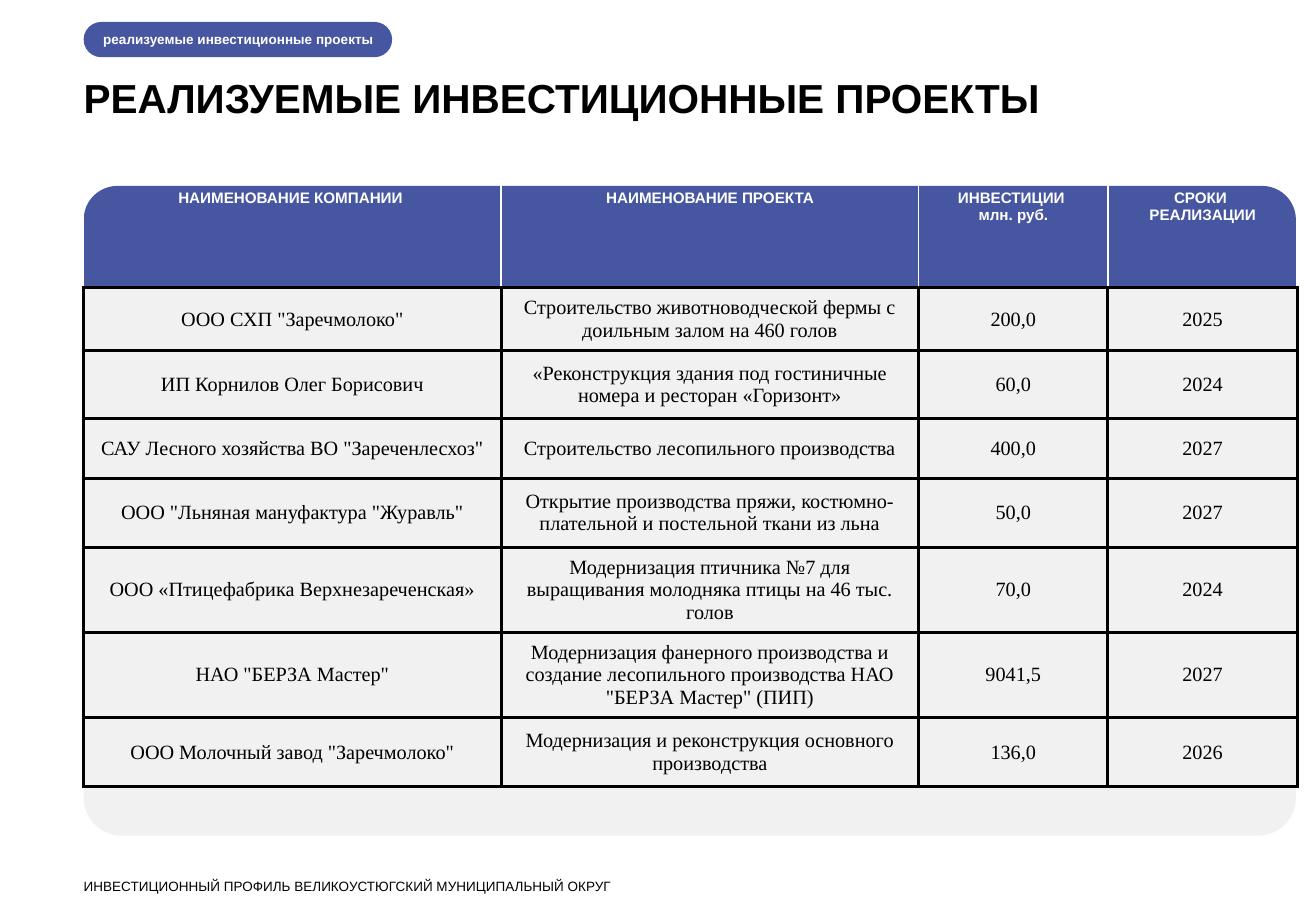
from lxml import etree
from pptx import Presentation
from pptx.dml.color import RGBColor
from pptx.enum.shapes import MSO_SHAPE
from pptx.enum.text import MSO_ANCHOR, PP_ALIGN
from pptx.oxml.ns import qn
from pptx.util import Pt

ROUND_RECT = MSO_SHAPE.ROUNDED_RECTANGLE
TOP, MIDDLE = MSO_ANCHOR.TOP, MSO_ANCHOR.MIDDLE
LEFT, CENTER = PP_ALIGN.LEFT, PP_ALIGN.CENTER

BLUE, GREY, WHITE, BLACK = "4756A0", "F1F1F1", "FFFFFF", "000000"
X, CARD_W = 49.6, 718.6
COLUMNS = [247.5, 247.5, 112.2, 112.2]
ROWS = [61.9, 37.4, 40.3, 35.3, 41, 41, 41, 41]
TABLE_H = 351.4
FILLED_ROWS = 3

HEADERS = ["НАИМЕНОВАНИЕ КОМПАНИИ ", "НАИМЕНОВАНИЕ ПРОЕКТА",
           "ИНВЕСТИЦИИ \nмлн. руб.", "СРОКИ \nРЕАЛИЗАЦИИ"]
PROJECTS = [
    ['ООО СХП "Заречмолоко"',
     "Строительство животноводческой фермы с доильным залом на 460 голов",
     "200,0", "2025"],
    ["ИП Корнилов Олег Борисович",
     "«Реконструкция здания под гостиничные номера и ресторан «Горизонт»",
     "60,0", "2024"],
    ['САУ Лесного хозяйства ВО "Зареченлесхоз"',
     "Строительство лесопильного производства", "400,0", "2027"],
    ['ООО "Льняная мануфактура "Журавль"',
     "Открытие производства пряжи, костюмно-плательной и постельной ткани из льна",
     "50,0", "2027"],
    ["ООО «Птицефабрика Верхнезареченская»",
     "Модернизация птичника №7 для выращивания молодняка птицы на 46 тыс. голов",
     "70,0", "2024"],
    ['НАО "БЕРЗА Мастер"',
     "Модернизация фанерного производства и создание лесопильного производства "
     'НАО "БЕРЗА Мастер" (ПИП)', "9041,5", "2027"],
    ['ООО Молочный завод "Заречмолоко"',
     "Модернизация и реконструкция основного производства", "136,0", "2026"],
]


def rgb(color):
    return RGBColor.from_string(color)


def write(tf, text, size, color=BLACK, font="Arial", bold=False, align=LEFT):
    for i, line in enumerate(text.split("\n")):
        p = tf.add_paragraph() if i else tf.paragraphs[0]
        p.alignment = align
        r = p.add_run()
        r.text = line
        r.font.size, r.font.name, r.font.bold = Pt(size), font, bold
        r.font.color.rgb = rgb(color)


def set_borders(cell, sides):
    """Draw cell borders; sides maps L, R, T, B to (colour, width)."""
    tcPr = cell._tc.get_or_add_tcPr()
    for side in "LRTB":
        color, width = sides[side]
        ln = etree.SubElement(tcPr, qn(f"a:ln{side}"), w=str(Pt(width)))
        fill = etree.SubElement(ln, qn("a:solidFill"))
        etree.SubElement(fill, qn("a:srgbClr"), val=color)


class SlideBuilder:
    def __init__(self, prs):
        self.s = prs.slides.add_slide(prs.slide_layouts[6])

    def panel(self, x, y, w, h, color, radius):
        sp = self.s.shapes.add_shape(ROUND_RECT, Pt(x), Pt(y), Pt(w), Pt(h))
        sp.adjustments[0] = radius
        sp.shadow.inherit = False
        sp.fill.solid()
        sp.fill.fore_color.rgb = rgb(color)
        sp.line.fill.background()
        return sp

    def badge(self, x, y, w, h, text):
        tf = self.panel(x, y, w, h, BLUE, 0.5).text_frame
        tf.margin_left = Pt(8.6)
        tf.margin_top = tf.margin_right = tf.margin_bottom = 0
        tf.vertical_anchor = MIDDLE
        write(tf, text, 8, WHITE, bold=True)

    def label(self, x, y, w, h, text, size, bold=False):
        tf = self.s.shapes.add_textbox(Pt(x), Pt(y), Pt(w), Pt(h)).text_frame
        tf.word_wrap = True
        tf.margin_left = tf.margin_top = tf.margin_right = tf.margin_bottom = 0
        write(tf, text, size, bold=bold)

    def table(self, x, y, h, widths, heights, rows):
        """Add a table; h leaves room for rows that grow with their text."""
        frame = self.s.shapes.add_table(len(heights), len(widths), Pt(x), Pt(y),
                                        Pt(sum(widths)), Pt(h))
        table = frame.table
        table.first_row = table.horz_banding = False
        for column, width in zip(table.columns, widths):
            column.width = Pt(width)
        for i, (height, texts) in enumerate(zip(heights, rows)):
            table.rows[i].height = Pt(height)
            for j, text in enumerate(texts):
                self.cell(table.cell(i, j), text, i)
        frame.height = Pt(h)

    def cell(self, cell, text, row):
        black, white = (BLACK, 1.98), (WHITE, 0.96)
        sides = dict.fromkeys("LRT", black if row else white)
        set_borders(cell, {**sides, "B": black})
        if 1 <= row <= FILLED_ROWS:
            cell.fill.solid()
            cell.fill.fore_color.rgb = rgb(GREY)
        else:
            cell.fill.background()
        cell.vertical_anchor = MIDDLE if row else TOP
        if row:
            write(cell.text_frame, text, 12, font="Times New Roman", align=CENTER)
        else:
            write(cell.text_frame, text, 9, WHITE, bold=True, align=CENTER)


def main():
    prs = Presentation()
    prs.slide_width, prs.slide_height = Pt(780.12), Pt(540)
    b = SlideBuilder(prs)
    b.panel(X, 154.1, CARD_W, 341.3, GREY, 0.066)
    b.panel(X, 110.2, CARD_W, 90, BLUE, 0.222)
    b.label(X, 43.2, 720.7, 28.1, "РЕАЛИЗУЕМЫЕ ИНВЕСТИЦИОННЫЕ ПРОЕКТЫ", 24, bold=True)
    b.badge(X, 13, 182.9, 20.9, "реализуемые инвестиционные проекты")
    b.table(X, 108.7, TABLE_H, COLUMNS, ROWS, [HEADERS] + PROJECTS)
    b.label(X, 520.2, 577.4, 8.6,
            "ИНВЕСТИЦИОННЫЙ ПРОФИЛЬ ВЕЛИКОУСТЮГСКИЙ МУНИЦИПАЛЬНЫЙ ОКРУГ", 8)
    prs.save("out.pptx")


if __name__ == "__main__":
    main()
